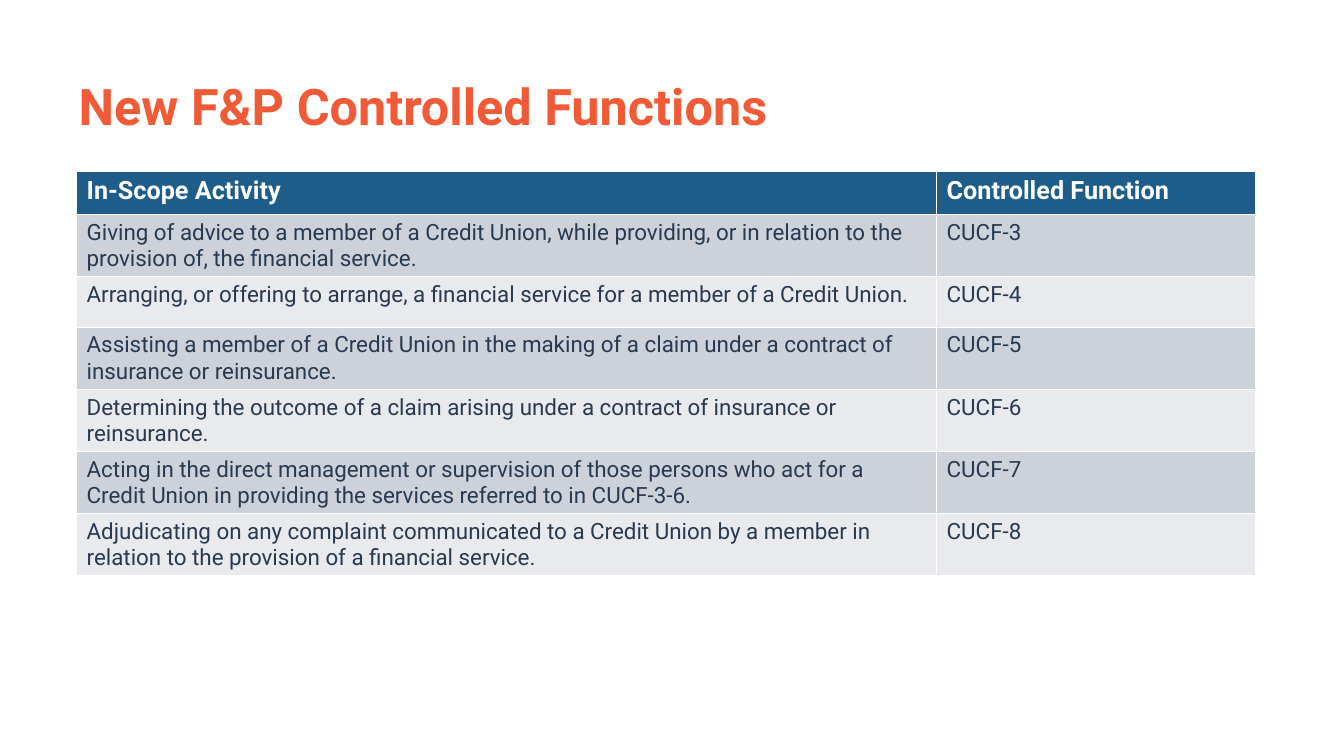
"""Build a slide listing the new controlled functions and their in-scope activities."""
from pptx import Presentation
from pptx.dml.color import RGBColor
from pptx.enum.text import MSO_ANCHOR, MSO_AUTO_SIZE, PP_ALIGN
from pptx.util import Inches, Pt

HEADING = "New F&P Controlled Functions"
HEADER = ("In-Scope Activity", "Controlled Function")
ACTIVITIES = [
    ("Giving of advice to a member of a Credit Union, while providing, or in relation to the "
     "provision of, the financial service.", "CUCF-3"),
    ("Arranging, or offering to arrange, a financial service for a member of a Credit Union.",
     "CUCF-4"),
    ("Assisting a member of a Credit Union in the making of a claim under a contract of "
     "insurance or reinsurance.", "CUCF-5"),
    ("Determining the outcome of a claim arising under a contract of insurance or reinsurance.",
     "CUCF-6"),
    ("Acting in the direct management or supervision of those persons who act for a Credit Union "
     "in providing the services referred to in CUCF-3-6.", "CUCF-7"),
    ("Adjudicating on any complaint communicated to a Credit Union by a member in relation to the "
     "provision of a financial service.", "CUCF-8"),
]
ORANGE, BLUE, NAVY, WHITE = "F05A36", "1E5D8A", "293A50", "FFFFFF"
BANDS = ("CDD2DA", "E8EAED")
COLUMN_WIDTHS = (8.53, 3.16)
HEADER_HEIGHT, ROW_HEIGHT = 0.43, 0.5


def colour(value):
    return RGBColor.from_string(value)


def style(paragraph, size, value, bold):
    for run in paragraph.runs:
        run.font.name = "Roboto"
        run.font.size = Pt(size)
        run.font.bold = bold
        run.font.color.rgb = colour(value)


def add_heading(slide):
    heading = slide.shapes.title
    heading.left, heading.top = Inches(0.78), Inches(0.81)
    heading.width, heading.height = Inches(11.98), Inches(0.77)
    frame = heading.text_frame
    frame.text = HEADING
    frame.auto_size = MSO_AUTO_SIZE.NONE
    frame.word_wrap = True
    frame.vertical_anchor = MSO_ANCHOR.TOP
    frame.margin_left = frame.margin_top = frame.margin_right = frame.margin_bottom = 0
    line = frame.paragraphs[0]
    line.alignment = PP_ALIGN.LEFT
    line.line_spacing = 0.9
    style(line, 36, ORANGE, True)


def add_functions(slide):
    rows = [HEADER, *ACTIVITIES]
    heights = [HEADER_HEIGHT] + [ROW_HEIGHT] * len(ACTIVITIES)
    functions = slide.shapes.add_table(
        len(rows), len(HEADER), Inches(0.76), Inches(1.7),
        Inches(sum(COLUMN_WIDTHS)), Inches(sum(heights))).table
    for column, width in zip(functions.columns, COLUMN_WIDTHS):
        column.width = Inches(width)
    for r, (row, height) in enumerate(zip(rows, heights)):
        functions.rows[r].height = Inches(height)
        is_header = r == 0
        for c, words in enumerate(row):
            cell = functions.cell(r, c)
            cell.text_frame.text = words
            cell.fill.solid()
            cell.fill.fore_color.rgb = colour(BLUE if is_header else BANDS[(r - 1) % 2])
            style(cell.text_frame.paragraphs[0], 18 if is_header else 16,
                  WHITE if is_header else NAVY, is_header)


def main():
    deck = Presentation()
    deck.slide_width, deck.slide_height = Inches(13.33), Inches(7.5)
    slide = deck.slides.add_slide(deck.slide_layouts[5])
    add_heading(slide)
    add_functions(slide)
    deck.save("out.pptx")


if __name__ == "__main__":
    main()
